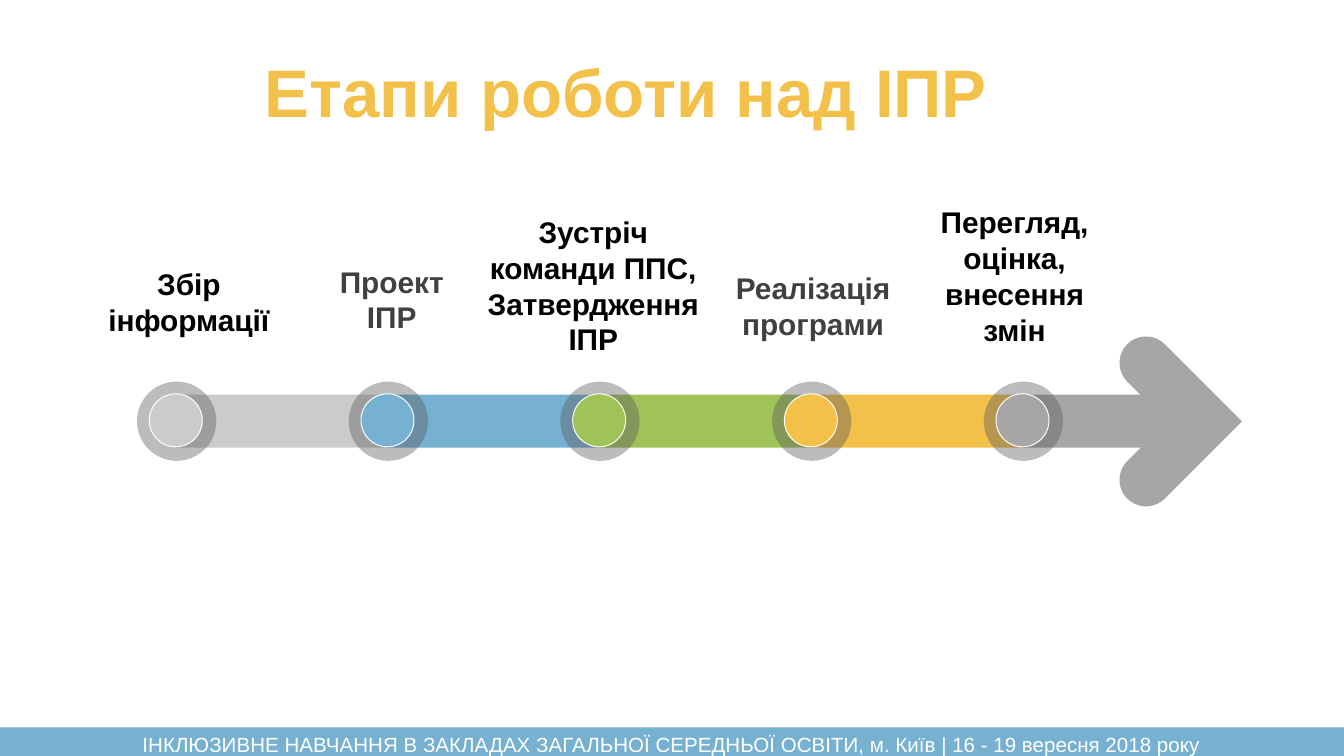
from math import cos, radians, sin

from lxml.etree import SubElement
from pptx import Presentation
from pptx.dml.color import RGBColor
from pptx.enum.shapes import MSO_SHAPE
from pptx.enum.text import MSO_ANCHOR, MSO_AUTO_SIZE, PP_ALIGN
from pptx.oxml.ns import qn
from pptx.util import Pt

FONT = "Arial"
BLUE, GOLD, GRAY = "76B1D1", "F3C04A", "A6A6A6"
STAGE_COLORS = ["CBCBCB", BLUE, "A0C358", GOLD, GRAY]
STAGE_PITCH = 113.4
TRACK_LEFT, TRACK_TOP, TRACK_HEIGHT = 94.4, 211.5, 28.4
LAST_WIDTH = 103
RING_LEFT, RING_TOP, RING_SIZE = 73.4, 204.4, 42.5
DOT_SIZE, DOT_INSET = 28.4, 6.6
HEAD_LEFT, HEAD_TOP, HEAD_SIZE = 577.6, 189.4, 72.7

STAGE_LABELS = [
    (49, 139, 104.4, 46, ["Збір інформації"], "000000", True),
    (173.5, 137.5, 72.7, 46, ["Проект ІПР"], "404040", True),
    (253.4, 110.9, 128.9, 85,
     ["Зустріч", "команди ППС,", "Затвердження", "ІПР"], "000000", False),
    (385.2, 141.1, 100.8, 46, ["Реалізація програми"], "404040", True),
    (494.6, 105.8, 97.9, 85, ["Перегляд, оцінка, внесення змін"], "000000", True),
]
EVENT = ("ІНКЛЮЗИВНЕ НАВЧАННЯ В ЗАКЛАДАХ ЗАГАЛЬНОЇ СЕРЕДНЬОЇ ОСВІТИ, "
         "м. Київ | 16 - 19 вересня 2018 року")


def rgb(color):
    return RGBColor.from_string(color)


def paint(shape, color, outline=None, opacity=None):
    shape.shadow.inherit = False
    shape.fill.solid()
    shape.fill.fore_color.rgb = rgb(color)
    if opacity is not None:
        tint = shape.fill._xPr.find(qn("a:solidFill"))[0]
        SubElement(tint, qn("a:alpha")).set("val", str(opacity * 1000))
    if outline:
        shape.line.color.rgb = rgb(outline)
        shape.line.width = Pt(0.5)
    else:
        shape.line.fill.background()


def add_block(slide, kind, left, top, width, height, color, **style):
    block = slide.shapes.add_shape(kind, Pt(left), Pt(top), Pt(width), Pt(height))
    paint(block, color, **style)


def style_paragraph(paragraph, size, color, bold):
    paragraph.alignment = PP_ALIGN.CENTER
    paragraph.font.name = FONT
    paragraph.font.size = Pt(size)
    paragraph.font.bold = bold
    paragraph.font.color.rgb = rgb(color)


def add_label(slide, left, top, width, height, lines, color, wrap=True, size=16, bold=True):
    label = slide.shapes.add_textbox(Pt(left), Pt(top), Pt(width), Pt(height))
    frame = label.text_frame
    frame.word_wrap = wrap
    frame.auto_size = MSO_AUTO_SIZE.SHAPE_TO_FIT_TEXT
    frame.text = "\n".join(lines)
    for paragraph in frame.paragraphs:
        style_paragraph(paragraph, size, color, bold)
    return frame


def arc(center_x, center_y, radius, start):
    angles = [radians(start + step) for step in range(0, 181, 10)]
    return [(center_x + radius * cos(angle), center_y + radius * sin(angle))
            for angle in angles]


def add_arrowhead(slide):
    radius = TRACK_HEIGHT / 2
    far = HEAD_SIZE - radius
    inner = HEAD_SIZE - TRACK_HEIGHT
    outline = (arc(radius, far, radius, 90) + [(inner, inner)]
               + arc(far, radius, radius, 180) + [(HEAD_SIZE, HEAD_SIZE)])
    points = [(Pt(HEAD_LEFT + x), Pt(HEAD_TOP + y)) for x, y in outline]
    builder = slide.shapes.build_freeform(*points[0])
    builder.add_line_segments(points[1:], close=True)
    arrowhead = builder.convert_to_shape()
    arrowhead.rotation = 315
    paint(arrowhead, GRAY)


def add_title(slide):
    title = slide.shapes.title
    title.left, title.top, title.width, title.height = Pt(82), Pt(18), Pt(507), Pt(61.2)
    title.text_frame.text = "Етапи роботи над ІПР"
    title.text_frame.vertical_anchor = MSO_ANCHOR.MIDDLE
    style_paragraph(title.text_frame.paragraphs[0], 36, GOLD, True)


def add_track(slide):
    for index, color in enumerate(STAGE_COLORS):
        width = LAST_WIDTH if index == len(STAGE_COLORS) - 1 else STAGE_PITCH
        add_block(slide, MSO_SHAPE.RECTANGLE, TRACK_LEFT + index * STAGE_PITCH,
                  TRACK_TOP, width, TRACK_HEIGHT, color)
    add_arrowhead(slide)


def add_milestones(slide):
    for index, color in enumerate(STAGE_COLORS):
        left = RING_LEFT + index * STAGE_PITCH
        add_block(slide, MSO_SHAPE.OVAL, left, RING_TOP, RING_SIZE, RING_SIZE,
                  "595959", opacity=40)
        add_block(slide, MSO_SHAPE.OVAL, left + DOT_INSET, RING_TOP + DOT_INSET,
                  DOT_SIZE, DOT_SIZE, color, outline="FFFFFF")


def add_footer(slide):
    add_block(slide, MSO_SHAPE.RECTANGLE, 0, 389.7, 720, 16.5, BLUE)
    frame = add_label(slide, 0, 386.6, 720, 21.6, [EVENT], "FFFFFF", size=11, bold=False)
    frame.paragraphs[0].line_spacing = 1.15
    frame.paragraphs[0].space_after = Pt(10)


def main():
    deck = Presentation()
    deck.slide_width, deck.slide_height = Pt(720), Pt(405)
    slide = deck.slides.add_slide(deck.slide_layouts[5])
    add_title(slide)
    add_track(slide)
    add_milestones(slide)
    for label in STAGE_LABELS:
        add_label(slide, *label)
    add_footer(slide)
    deck.save("out.pptx")


if __name__ == "__main__":
    main()
